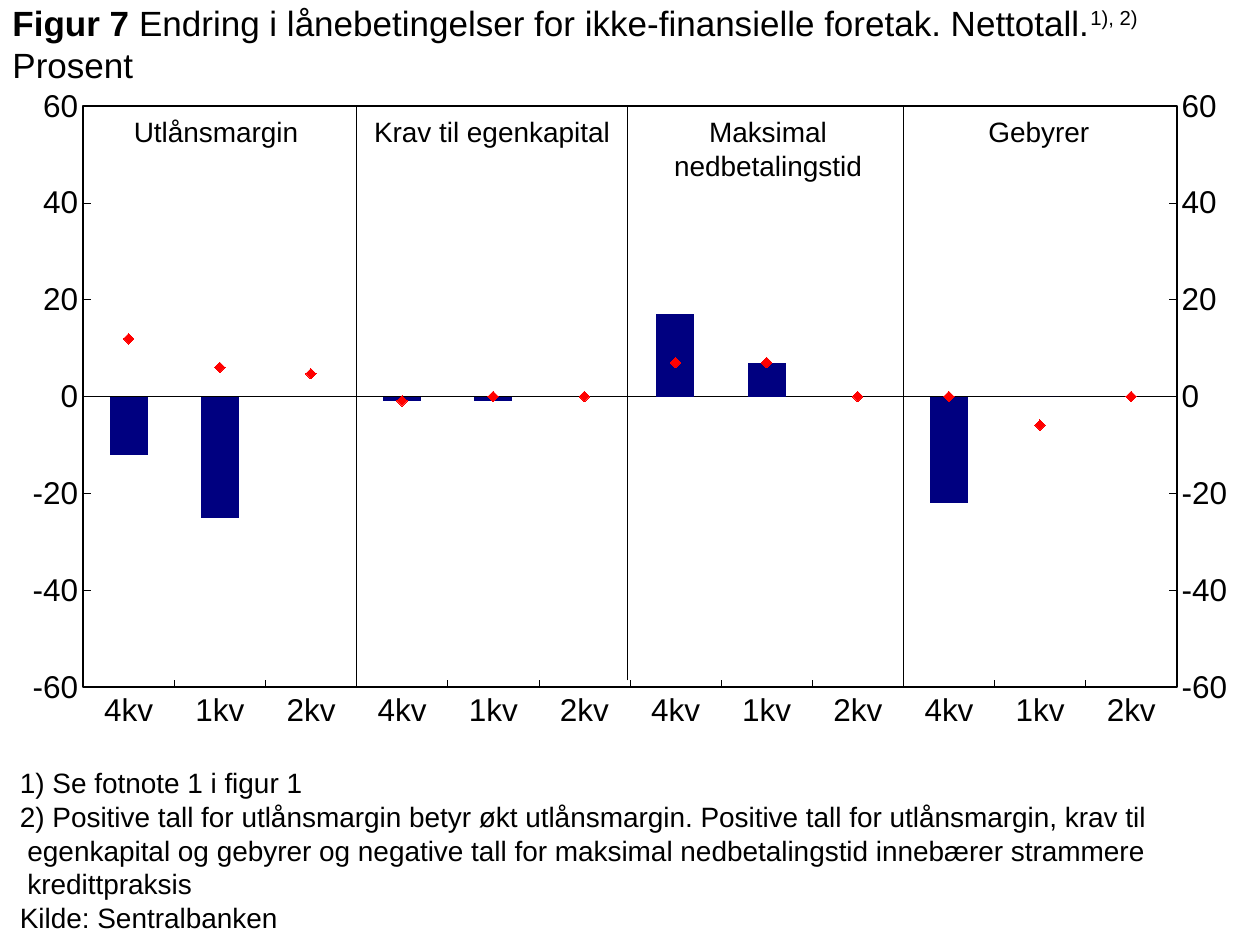
from copy import deepcopy

from pptx import Presentation
from pptx.chart.data import CategoryChartData
from pptx.dml.color import RGBColor
from pptx.enum.chart import XL_CHART_TYPE, XL_MARKER_STYLE, XL_TICK_LABEL_POSITION, XL_TICK_MARK
from pptx.enum.shapes import MSO_CONNECTOR
from pptx.enum.text import MSO_ANCHOR, PP_ALIGN
from pptx.oxml import parse_xml
from pptx.oxml.ns import nsdecls, qn
from pptx.util import Inches, Pt

COLUMN = XL_CHART_TYPE.COLUMN_CLUSTERED
DIAMOND = XL_MARKER_STYLE.DIAMOND
NO_LABELS, NEXT_TO = XL_TICK_LABEL_POSITION.NONE, XL_TICK_LABEL_POSITION.NEXT_TO_AXIS
TICK_IN, TICK_NONE = XL_TICK_MARK.INSIDE, XL_TICK_MARK.NONE
STRAIGHT = MSO_CONNECTOR.STRAIGHT
TOP, MIDDLE = MSO_ANCHOR.TOP, MSO_ANCHOR.MIDDLE
LEFT, CENTER = PP_ALIGN.LEFT, PP_ALIGN.CENTER

CHART = (0, 0.7, 10, 5.33)
PLOT = {"x": 0.066, "y": 0.026, "w": 0.868, "h": 0.866}
QUARTERS = ["4kv", "1kv", "2kv"]
PANELS = [
    ("Utlånsmargin", 0.62, 2.19, [-12, -25, None], [11.9, 6, 4.7]),
    ("Krav til egenkapital", 2.81, 2.19, [-1, -1, None], [-0.9, 0, 0]),
    ("Maksimal nedbetalingstid", 5, 2.19, [17, 7, None], [7, 7, 0]),
    ("Gebyrer", 7.11, 2.27, [-22, 0, None], [0, -5.9, 0]),
]
DIVIDERS = [2.83, 4.98, 7.17]
NOTES = [
    ("1) Se fotnote 1 i figur 1", 0.5, -0.5),
    ("2) Positive tall for utlånsmargin betyr økt utlånsmargin. "
     "Positive tall for utlånsmargin, krav til", 0.06, -0.06),
    ("egenkapital og gebyrer og negative tall for maksimal nedbetalingstid "
     "innebærer strammere kredittpraksis", 0.06, 0),
    ("Kilde: Sentralbanken", 0.5, -0.5),
]


def rgb(value):
    return RGBColor.from_string(value)


def format_run(r, size=16, bold=False, raised=0):
    r.font.name, r.font.size, r.font.bold = "Arial", Pt(size), bold
    r.font.color.rgb = rgb("000000")
    if raised:
        r._r.get_or_add_rPr().set("baseline", str(raised * 1000))


def set_line(line, color="000000", width=0.25):
    line.color.rgb = rgb(color)
    line.width = Pt(width)


def set_child(parent, tag, value):
    parent.find(qn(tag)).set("val", str(value))


class Slide:
    """Holds the style and the current slide, and adds each kind of element."""

    bar, dot = "000080", "FF0000"

    def __init__(self, prs):
        self.s = prs.slides.add_slide(prs.slide_layouts[6])

    def text(self, box, paragraphs, align=LEFT, anchor=TOP):
        tf = self.s.shapes.add_textbox(*map(Inches, box)).text_frame
        tf.word_wrap, tf.vertical_anchor = True, anchor
        for i, (runs, margin, indent) in enumerate(paragraphs):
            p = tf.add_paragraph() if i else tf.paragraphs[0]
            p.alignment = align
            pPr = p._p.get_or_add_pPr()
            pPr.set("marL", str(Inches(margin)))
            pPr.set("indent", str(Inches(indent)))
            for words, style in runs:
                r = p.add_run()
                r.text = words
                format_run(r, **style)

    def label(self, box, words, **style):
        self.text(box, [([(words, style)], 0, 0)], align=CENTER)

    def divider(self, x, top, bottom):
        sp = self.s.shapes.add_connector(STRAIGHT, *map(Inches, (x, bottom, x, top)))
        set_line(sp.line, width=0.75)
        sp._element.spPr.append(parse_xml(f"<a:effectLst {nsdecls('a')}/>"))

    def chart(self, box, bars, dots):
        data = CategoryChartData()
        data.categories = [str(n + 1) for n in range(len(bars[0]))]
        for i, values in enumerate(bars + dots):
            data.add_series(f"Series {i + 1}", values)
        chart = self.s.shapes.add_chart(COLUMN, *map(Inches, box), data).chart
        chart.has_title = chart.has_legend = False
        chart.font.name, chart.font.size = "Arial", Pt(18)
        chart.font.color.rgb = rgb("000000")
        self.axes(chart)
        self.add_right_axis(chart, len(bars))
        columns, lines = chart.plots
        columns.gap_width, columns.overlap = 140, 100
        columns.vary_by_categories = False
        for series in columns.series:
            series.format.fill.solid()
            series.format.fill.fore_color.rgb = rgb(self.bar)
            series.invert_if_negative = False
        for series in lines.series:
            series.format.line.fill.background()
            series.smooth = False
            marker = series.marker
            marker.style, marker.size = DIAMOND, 6
            marker.format.fill.solid()
            marker.format.fill.fore_color.rgb = rgb(self.dot)
            set_line(marker.format.line, self.dot)

    def axes(self, chart):
        cat, val = chart.category_axis, chart.value_axis
        val.minimum_scale, val.maximum_scale, val.major_unit = -60, 60, 20
        for axis, tick, labels in ((cat, TICK_NONE, NO_LABELS), (val, TICK_IN, NEXT_TO)):
            axis.has_major_gridlines = False
            axis.major_tick_mark, axis.minor_tick_mark = tick, TICK_NONE
            axis.tick_label_position = labels
            set_line(axis.format.line)

    def add_right_axis(self, chart, first_dot):
        area = chart._chartSpace.chart.plotArea
        bar = area.find(qn("c:barChart"))
        line = parse_xml(
            f'<c:lineChart {nsdecls("c")}><c:grouping val="standard"/><c:varyColors val="0"/>'
            '<c:marker val="1"/><c:axId val="101"/><c:axId val="102"/></c:lineChart>')
        for ser in bar.findall(qn("c:ser"))[first_dot:]:
            invert = ser.find(qn("c:invertIfNegative"))
            if invert is not None:
                ser.remove(invert)
            line.find(qn("c:marker")).addprevious(ser)
        bar.addnext(line)
        left = area.find(qn("c:valAx"))
        cat, val = deepcopy(area.find(qn("c:catAx"))), deepcopy(left)
        for axis, own, other, cross in ((cat, 101, 102, "min"), (val, 102, 101, "max")):
            set_child(axis, "c:axId", own)
            set_child(axis, "c:crossAx", other)
            set_child(axis, "c:crosses", cross)
        set_child(cat, "c:majorTickMark", "in")
        set_child(val, "c:axPos", "r")
        left.addnext(cat)
        cat.addnext(val)
        val.addnext(parse_xml(
            f'<c:spPr {nsdecls("c", "a")}><a:noFill/><a:ln w="12700"><a:solidFill>'
            '<a:srgbClr val="000000"/></a:solidFill></a:ln></c:spPr>'))
        for old in area.findall(qn("c:layout")):
            area.remove(old)
        sizes = "".join(f'<c:{k} val="{v}"/>' for k, v in PLOT.items())
        area.insert(0, parse_xml(
            f'<c:layout {nsdecls("c")}><c:manualLayout><c:layoutTarget val="inner"/>'
            f'<c:xMode val="edge"/><c:yMode val="edge"/>{sizes}</c:manualLayout></c:layout>'))


def spread(index, values):
    n = len(values)
    return [None] * (n * index) + values + [None] * (n * (len(PANELS) - index - 1))


def main():
    prs = Presentation()
    prs.slide_width, prs.slide_height = Inches(10), Inches(7.5)
    s = Slide(prs)
    bars = [spread(i, panel[3]) for i, panel in enumerate(PANELS)]
    dots = [spread(i, panel[4]) for i, panel in enumerate(PANELS)]
    s.chart(CHART, bars, dots)
    for name, left, width, _, _ in PANELS:
        s.label((left, 0.86, width, 0.37), name)
    for x in DIVIDERS:
        s.divider(x, 0.84, 5.4)
    quarters = QUARTERS * len(PANELS)
    step = CHART[2] * PLOT["w"] / len(quarters)
    for i, quarter in enumerate(quarters):
        s.label((CHART[2] * PLOT["x"] + i * step, 5.43, step, 0.37), quarter, size=18)
    s.text((0.06, 6.03, 9.94, 1.39),
           [([(words, {})], margin, indent) for words, margin, indent in NOTES])
    title = [
        ("Figur 7", {"size": 20, "bold": True}),
        (" Endring i lånebetingelser for ikke-finansielle foretak. Nettotall.", {"size": 20}),
        ("1), 2)", {"size": 20, "raised": 30}),
        (" Prosent", {"size": 20}),
    ]
    s.text((0, 0, 9.38, 0.69), [(title, 0, 0)], anchor=MIDDLE)
    prs.save("out.pptx")


if __name__ == "__main__":
    main()
